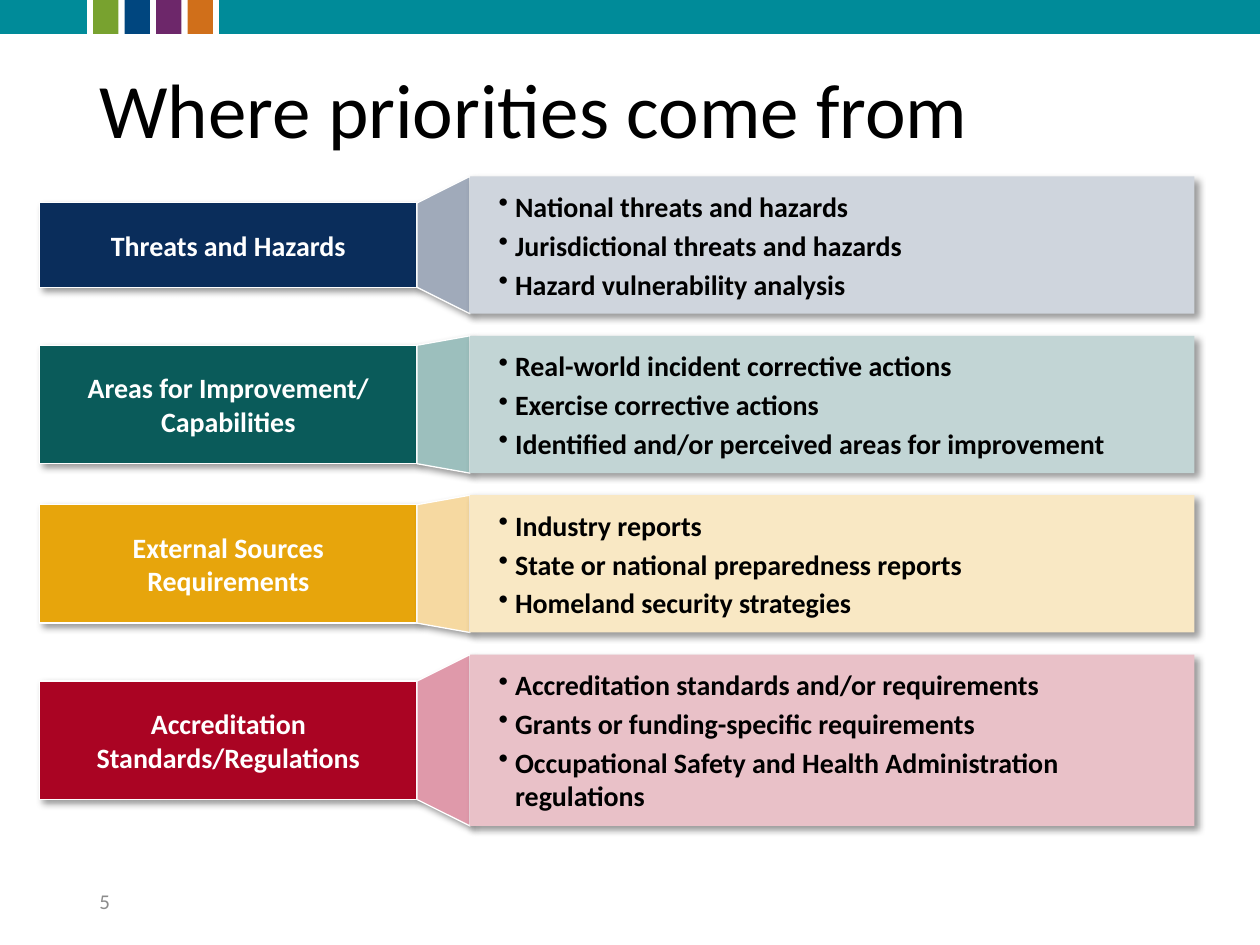
from lxml.etree import SubElement
from pptx import Presentation
from pptx.dml.color import RGBColor
from pptx.enum.shapes import MSO_SHAPE as Shape
from pptx.enum.text import MSO_ANCHOR as Anchor, PP_ALIGN as Align
from pptx.oxml.ns import qn
from pptx.util import Inches, Pt

COLUMNS, ROWS = 100, 75
WIDTH, HEIGHT = Inches(10), Inches(7.5)
FONT = "Calibri"

BAND_HEIGHT = 2.7
BAND_COLOURS = ["78A22F", "00467F", "6D276A", "D06F1A"]
LABEL_LEFT, LABEL_WIDTH = 3.15, 29.95
PANEL_LEFT, PANEL_WIDTH = 37.3, 57.5
FIRST_TOP, ROW_GAP = 14, 1.75

SOURCES = [
    (["Threats and Hazards"], 6.7, 10.9, ("0A2D5B", "A0AABA", "CFD5DD"),
     ["National threats and hazards",
      "Jurisdictional threats and hazards",
      "Hazard vulnerability analysis"]),
    (["Areas for Improvement/", "Capabilities"], 9.4, 10.9,
     ("0A5B5A", "9CBFBD", "C2D5D5"),
     ["Real-world incident corrective actions",
      "Exercise corrective actions",
      "Identified and/or perceived areas for improvement"]),
    (["External Sources Requirements"], 9.4, 10.9,
     ("E7A50C", "F6D9A1", "F9E8C4"),
     ["Industry reports",
      "State or national preparedness reports",
      "Homeland security strategies"]),
    (["Accreditation Standards/Regulations"], 9.4, 13.6,
     ("AA0423", "DF99AA", "E9C1C8"),
     ["Accreditation standards and/or requirements",
      "Grants or funding-specific requirements",
      "Occupational Safety and Health Administration regulations"]),
]


def colour(hex_string):
    return RGBColor.from_string(hex_string)


def place(left, top, width, height):
    column, row = WIDTH / COLUMNS, HEIGHT / ROWS
    return (round(left * column), round(top * row),
            round(width * column), round(height * row))


def add_box(page, kind, area, fill, outline=None):
    box = page.shapes.add_shape(kind, *place(*area))
    box.shadow.inherit = False
    box.fill.solid()
    box.fill.fore_color.rgb = colour(fill)
    if outline:
        box.line.color.rgb = colour(outline)
        box.line.width = Pt(0.75)
    else:
        box.line.fill.background()
    return box


def add_shadow(box):
    effects = box._element.spPr.find(qn("a:effectLst"))
    shadow = SubElement(effects, qn("a:outerShdw"), blurRad=str(Pt(4)),
                        dist=str(Pt(3)), dir=str(45 * 60000),
                        algn="tl", rotWithShape="0")
    black = SubElement(shadow, qn("a:srgbClr"), val="000000")
    SubElement(black, qn("a:alpha"), val="40000")


def write(box, lines, size, hex_string, bold=False, align=Align.LEFT, inset=0.1):
    frame = box.text_frame
    frame.word_wrap = True
    frame.vertical_anchor = Anchor.MIDDLE
    frame.margin_left = frame.margin_right = Inches(inset)
    frame.margin_top = frame.margin_bottom = Inches(inset)
    frame.text = "\n".join(lines)
    for para in frame.paragraphs:
        para.alignment = align
        for span in para.runs:
            span.font.name = FONT
            span.font.size = Pt(size)
            span.font.bold = bold
            span.font.color.rgb = colour(hex_string)
    return frame.paragraphs


def add_bullet(para):
    para.space_after = Pt(3)
    properties = para._p.get_or_add_pPr()
    properties.set("marL", str(Inches(0.26)))
    properties.set("indent", str(Inches(-0.13)))
    SubElement(properties, qn("a:buChar"), char="•")


def add_text(page, area, text, size, hex_string):
    box = page.shapes.add_textbox(*place(*area))
    return write(box, [text], size, hex_string)[0]


def add_band(page):
    stripes = [(0, 6.9, "008B99"), (17.4, COLUMNS - 17.4, "008B99")]
    stripes += [(7.4 + 2.5 * index, 2, fill)
                for index, fill in enumerate(BAND_COLOURS)]
    for left, width, fill in stripes:
        add_box(page, Shape.RECTANGLE, (left, 0, width, BAND_HEIGHT), fill)


def add_label(page, middle, height, lines, fill):
    area = (LABEL_LEFT, middle - height / 2, LABEL_WIDTH, height)
    box = add_box(page, Shape.RECTANGLE, area, fill, "FFFFFF")
    add_shadow(box)
    write(box, lines, 16, "FFFFFF", True, Align.CENTER, 0.2)


def add_funnel(page, middle, label_height, panel_height, fill):
    start = LABEL_LEFT + LABEL_WIDTH
    depth = PANEL_LEFT - start
    centre = start + depth / 2
    area = (centre - panel_height / 2, middle - depth / 2, panel_height, depth)
    box = add_box(page, Shape.TRAPEZOID, area, fill, "FFFFFF")
    box.adjustments[0] = (panel_height - label_height) / 2 / depth
    box.rotation = 270
    add_shadow(box)


def add_panel(page, top, height, lines, fill):
    box = add_box(page, Shape.RECTANGLE,
                  (PANEL_LEFT, top, PANEL_WIDTH, height), fill)
    add_shadow(box)
    for para in write(box, lines, 16, "000000", True):
        add_bullet(para)


def main():
    deck = Presentation()
    deck.slide_width, deck.slide_height = WIDTH, HEIGHT
    page = deck.slides.add_slide(deck.slide_layouts[6])
    add_band(page)
    title = add_text(page, (6.9, 4, 86.2, 10), "Where priorities come from",
                     44, "000000")
    title.line_spacing = 0.9
    add_text(page, (6.9, 69.5, 22.5, 4), "5", 12, "8C8C8C")

    top = FIRST_TOP
    for label, label_height, panel_height, fills, details in SOURCES:
        middle = top + panel_height / 2
        dark, medium, light = fills
        add_label(page, middle, label_height, label, dark)
        add_funnel(page, middle, label_height, panel_height, medium)
        add_panel(page, top, panel_height, details, light)
        top += panel_height + ROW_GAP

    deck.save("out.pptx")


if __name__ == "__main__":
    main()
